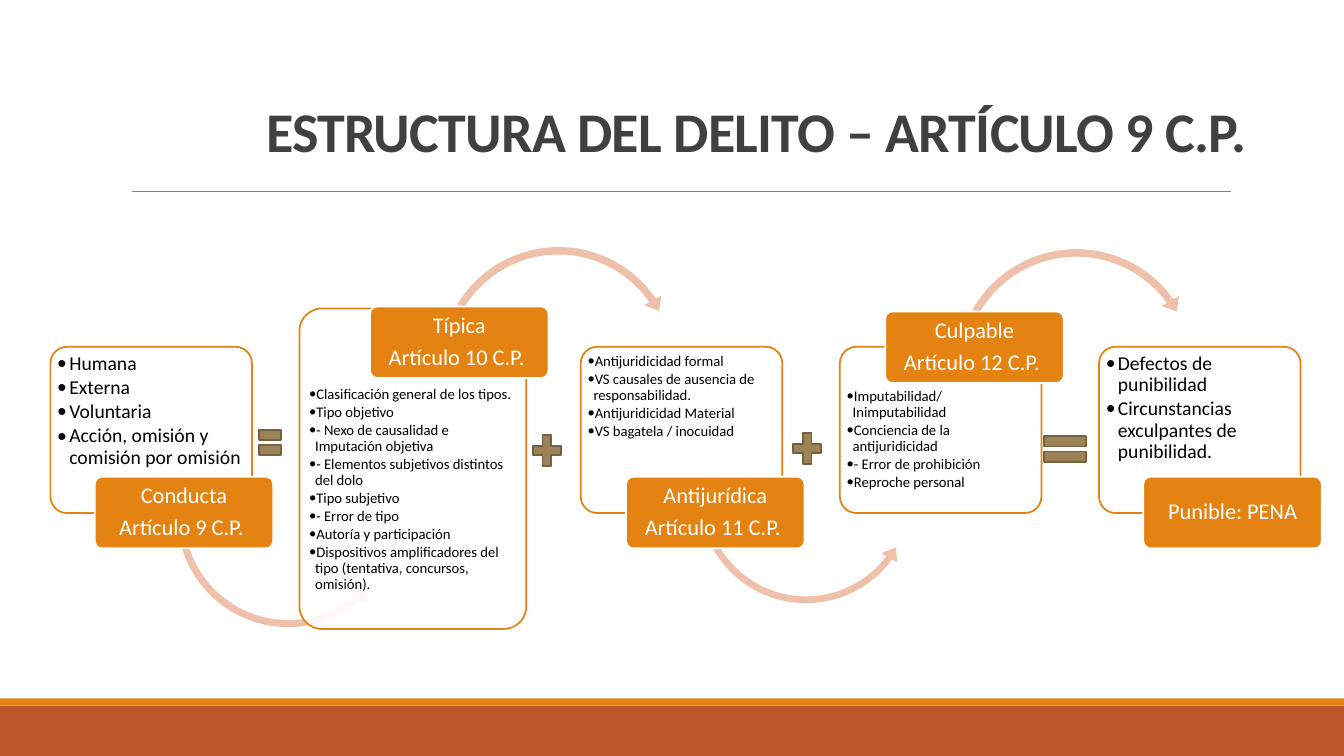
from dataclasses import dataclass
from typing import Optional

from lxml import etree
from pptx import Presentation
from pptx.dml.color import RGBColor
from pptx.enum.shapes import MSO_CONNECTOR, MSO_SHAPE
from pptx.enum.text import MSO_ANCHOR, MSO_AUTO_SIZE, PP_ALIGN
from pptx.oxml.ns import qn
from pptx.util import Inches, Pt

ROUND = MSO_SHAPE.ROUNDED_RECTANGLE
RECT = MSO_SHAPE.RECTANGLE
PLUS = MSO_SHAPE.MATH_PLUS
EQUAL = MSO_SHAPE.MATH_EQUAL
ARC_UP = MSO_SHAPE.CIRCULAR_ARROW
ARC_DOWN = MSO_SHAPE.LEFT_CIRCULAR_ARROW
STRAIGHT = MSO_CONNECTOR.STRAIGHT
LEFT, CENTER, RIGHT = PP_ALIGN.LEFT, PP_ALIGN.CENTER, PP_ALIGN.RIGHT
TOP, MIDDLE, BOTTOM = MSO_ANCHOR.TOP, MSO_ANCHOR.MIDDLE, MSO_ANCHOR.BOTTOM

ORANGE = RGBColor(0xE4, 0x83, 0x12)
RUST = RGBColor(0xBD, 0x58, 0x2C)
PEACH = RGBColor(0xEF, 0xC1, 0xAB)
TAN = RGBColor(0x9B, 0x83, 0x57)
BROWN = RGBColor(0x73, 0x61, 0x40)
GRAY = RGBColor(0x80, 0x80, 0x80)
DARK = RGBColor(0x40, 0x40, 0x40)
WHITE = RGBColor(0xFF, 0xFF, 0xFF)
BLACK = RGBColor(0, 0, 0)

FONT = "Calibri"
COLS, ROWS = 13.33, 7.5
CELL = Inches(1)
BODY = (2, 1.65)
TAG = (1.77, 0.71)
TAG_BELOW = (0.44, 1.29)


@dataclass
class Step:
    at: tuple
    tag: list
    items: list
    size: float
    body: tuple = BODY
    tag_at: tuple = TAG_BELOW
    margin: tuple = (0.02, 0.02)
    arc: Optional[tuple] = None
    turn: tuple = ()


STEPS = [
    Step((0.5, 3.44), ["Conducta", "Artículo 9 C.P. "],
         ["Humana", "Externa", "Voluntaria",
          "Acción, omisión y comisión por omisión"], 14,
         arc=(ARC_DOWN, 1.2, 0.52, 2.32),
         turn=(0.03, 3.9, 29.1, 97.68, 0.04)),
    Step((2.97, 3.06), ["Típica", "Artículo 10 C.P. "],
         ["Clasificación general de los tipos.", "Tipo objetivo",
          "- Nexo de causalidad e Imputación objetiva",
          "- Elementos subjetivos distintos del dolo",
          "Tipo subjetivo", "- Error de tipo", "Autoría y participación",
          "Dispositivos amplificadores del tipo "
          "(tentativa, concursos, omisión)."], 10.5,
         body=(2.25, 3.18), tag_at=(0.7, -0.02), margin=(0.03, 0.71),
         arc=(ARC_UP, 1.34, -0.67, 2.46),
         turn=(0.03, 3.67, 195.37, 126.54, 0.04)),
    Step((5.76, 3.44), ["Antijurídica", "Artículo 11 C.P. "],
         ["Antijuridicidad formal",
          "VS causales de ausencia de responsabilidad.",
          "Antijuridicidad Material", "VS bagatela / inocuidad"], 10.5,
         tag_at=(0.45, 1.29), arc=(ARC_DOWN, 1.12, 0.37, 2.23),
         turn=(0.03, 4.07, 21.83, 90.25, 0.04)),
    Step((8.33, 3.44), ["Culpable", "Artículo 12 C.P. "],
         ["Imputabilidad/Inimputabilidad", "Conciencia de la antijuridicidad",
          "- Error de prohibición", "Reproche personal"], 10.5,
         tag_at=(0.45, -0.35), margin=(0.02, 0.37),
         arc=(ARC_UP, 1.1, -1.03, 2.49),
         turn=(0.03, 3.62, 194.62, 125.76, 0.04)),
    Step((10.9, 3.44), ["Punible: PENA"],
         ["Defectos de punibilidad",
          "Circunstancias exculpantes de punibilidad."], 14),
]

SIGNS = [
    (EQUAL, 2.53, 4.18, 0.3, 0.42),
    (PLUS, 5.24, 4.26, 0.37, 0.42),
    (PLUS, 7.82, 4.24, 0.37, 0.42),
    (EQUAL, 10.28, 4.24, 0.57, 0.43),
]


def cells(*values):
    return [int(v * CELL) for v in values]


def add_block(slide, kind, box, fill, line=None):
    sp = slide.shapes.add_shape(kind, *cells(*box))
    sp.shadow.inherit = False
    sp.fill.solid()
    sp.fill.fore_color.rgb = fill
    if line is None:
        sp.line.fill.background()
    else:
        sp.line.color.rgb = line
        sp.line.width = Pt(1.25)
    return sp


def set_text(sp, lines, size, color, align, anchor, margins, gap, spacing=0.9):
    tf = sp.text_frame
    tf.word_wrap = True
    tf.auto_size = MSO_AUTO_SIZE.NONE
    tf.vertical_anchor = anchor
    tf.margin_left, tf.margin_top, tf.margin_right, tf.margin_bottom = cells(*margins)
    tf.text = "\n".join(lines)
    for p in tf.paragraphs:
        p.alignment = align
        p.line_spacing = spacing
        p.space_before = Pt(0)
        p.space_after = Pt(size * gap)
        for r in p.runs:
            r.font.name = FONT
            r.font.size = Pt(size)
            r.font.color.rgb = color
    return tf


def add_bullet(p, indent):
    p.level = 1
    pPr = p._p.get_or_add_pPr()
    pPr.set("marL", str(int(indent * CELL)))
    pPr.set("indent", str(-int(indent * CELL)))
    etree.SubElement(pPr, qn("a:buFont")).set("typeface", FONT)
    etree.SubElement(pPr, qn("a:buChar")).set("char", "•")


def add_step(slide, step):
    x, y = step.at
    body = add_block(slide, ROUND, (x, y, *step.body), WHITE, ORANGE)
    body.adjustments[0] = 0.1
    color = body.fill._xPr.find(qn("a:solidFill"))[0]
    etree.SubElement(color, qn("a:alpha")).set("val", "90000")
    left, top = step.margin
    tf = set_text(body, step.items, step.size, BLACK, LEFT, TOP,
                  (left, top, left + 0.02, 0), 0.15)
    for p in tf.paragraphs:
        add_bullet(p, 0.12 if step.size == 14 else 0.06)

    if step.arc:
        kind, dx, dy, side = step.arc
        arc = add_block(slide, kind, (x + dx, y + dy, side, side), PEACH)
        for i, value in enumerate(step.turn):
            arc.adjustments[i] = value

    dx, dy = step.tag_at
    tag = add_block(slide, ROUND, (x + dx, y + dy, *TAG), ORANGE, WHITE)
    tag.adjustments[0] = 0.1
    set_text(tag, step.tag, 16, WHITE, CENTER, MIDDLE,
             (0.03, 0.02, 0.03, 0.02), 0.35)


def add_frame(slide):
    add_block(slide, RECT, (0, 7, COLS, 0.5), RUST)
    add_block(slide, RECT, (0, 6.93, COLS, 0.07), ORANGE)
    rule = slide.shapes.add_connector(STRAIGHT, *cells(1.31, 1.9, 12.21, 1.9))
    rule.line.color.rgb = GRAY
    rule.line.width = Pt(0.5)
    etree.SubElement(rule._element.spPr, qn("a:effectLst"))


def add_title(slide, box):
    title = slide.shapes.title
    title.left, title.top, title.width, title.height = cells(*box)
    tf = set_text(title, ["ESTRUCTURA DEL DELITO – ARTÍCULO 9 C.P. "], 40, DARK,
                  RIGHT, BOTTOM, (0.1, 0.05, 0.1, 0.05), 0, 0.85)
    r = tf.paragraphs[0].runs[0]
    r.font.bold = True
    r._r.get_or_add_rPr().set("spc", "-50")


def main():
    prs = Presentation()
    prs.slide_width, prs.slide_height = cells(COLS, ROWS)
    slide = prs.slides.add_slide(prs.slide_layouts[5])
    add_frame(slide)
    add_title(slide, (2.08, 0.28, 10.5, 1.4))
    for step in STEPS:
        add_step(slide, step)
    for kind, *box in SIGNS:
        add_block(slide, kind, box, TAN, BROWN)
    prs.save("out.pptx")


if __name__ == "__main__":
    main()
